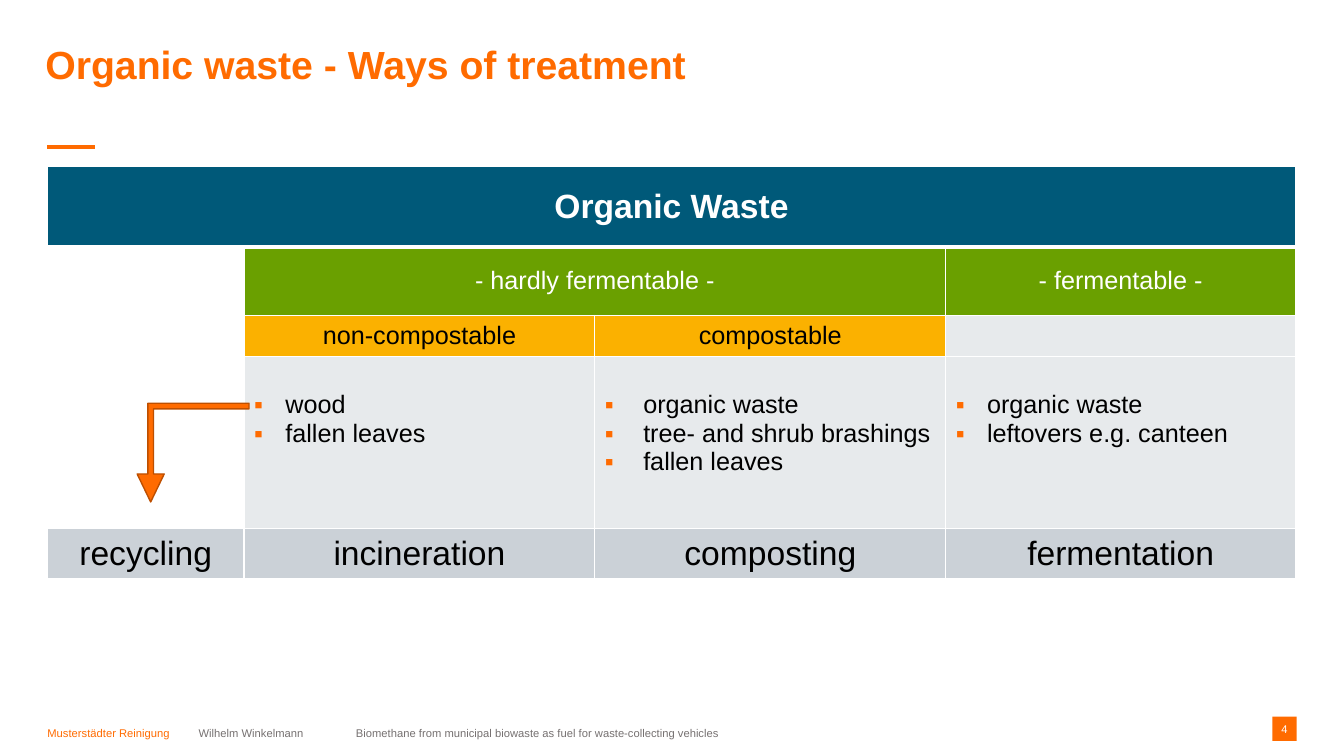
from pptx import Presentation
from pptx import util as u
from pptx.dml.color import RGBColor
from pptx.enum import shapes, text
from pptx.oxml import parse_xml
from pptx.oxml.ns import nsdecls

PX = 9144  # 100 px to the inch
ORANGE, WHITE, BLACK, GREY = "FF6B00", "FFFFFF", "000000", "767171"
BLUE, GREEN, YELLOW, PALE, SILVER = "005979", "6AA000", "FBB100", "E7EAEC", "CBD1D7"
rgb = RGBColor.from_string
CENTER, MIDDLE = text.PP_ALIGN.CENTER, text.MSO_ANCHOR.MIDDLE


def box(*lengths):
    return [n * PX for n in lengths]


def write(p, words, size, color, bold=False, align=text.PP_ALIGN.LEFT):
    p.alignment = align
    r = p.add_run()
    r.text = words
    r.font.name, r.font.size, r.font.bold = "Arial", u.Pt(size), bold
    r.font.color.rgb = rgb(color)


prs = Presentation()
prs.slide_width, prs.slide_height = box(1333, 750)
s = prs.slides.add_slide(prs.slide_layouts[5])

# Title
title = s.shapes.title
title.left, title.top, title.width, title.height = box(45, 45, 1241, 87)
tf = title.text_frame
tf.margin_left = tf.margin_top = tf.margin_right = tf.margin_bottom = 0
tf.vertical_anchor, tf.auto_size = text.MSO_ANCHOR.TOP, text.MSO_AUTO_SIZE.NONE
tf.paragraphs[0].line_spacing = 0.9
write(tf.paragraphs[0], "Organic waste - Ways of treatment", 28, ORANGE, True)

# Accent line under the title
accent = s.shapes.add_connector(shapes.MSO_CONNECTOR.STRAIGHT, *box(47, 146, 94, 146))
accent.line.color.rgb, accent.line.width = rgb(ORANGE), u.Pt(2.5)
accent._element.spPr.append(parse_xml(f"<a:effectLst {nsdecls('a')}/>"))

# Footer
for left, width, words, color in [
    (47, 130, "Musterstädter Reinigung", ORANGE),
    (197, 1024, "Wilhelm Winkelmann\tBiomethane from municipal biowaste"
                " as fuel for waste-collecting vehicles", GREY),
]:
    tf = s.shapes.add_textbox(*box(left, 703, width, 31)).text_frame
    tf.word_wrap, tf.vertical_anchor = True, text.MSO_ANCHOR.BOTTOM
    tf.margin_left = tf.margin_top = tf.margin_right = tf.margin_bottom = 0
    p = tf.paragraphs[0]
    write(p, words, 8, color)
    p._p.get_or_add_pPr().append(parse_xml(
        f'<a:tabLst {nsdecls("a")}><a:tab pos="{156 * PX}" algn="l"/></a:tabLst>'))

# Page number
badge = s.shapes.add_shape(shapes.MSO_SHAPE.RECTANGLE, *box(1262, 711, 24, 24))
badge.shadow.inherit = False
badge.fill.solid()
badge.fill.fore_color.rgb = rgb(ORANGE)
badge.line.fill.background()
tf = badge.text_frame
tf.margin_left = tf.margin_top = tf.margin_right = tf.margin_bottom = 0
tf.vertical_anchor = MIDDLE
write(tf.paragraphs[0], "4", 8, WHITE, align=CENTER)

# Table grid with white borders
cols = [195, 348, 348, 347]
rows = [80, 68, 41, 41, 41, 88, 46]
table = s.shapes.add_table(len(rows), len(cols), *box(47, 165, sum(cols), sum(rows))).table
table.first_row = table.horz_banding = False
for col, width in zip(table.columns, cols):
    col.width = width * PX
for row, height in zip(table.rows, rows):
    row.height = height * PX
for i in range(len(rows)):
    for j in range(len(cols)):
        cell = table.cell(i, j)
        for side in "LRTB":
            thick = (i, side) in [(0, "B"), (1, "T")]
            cell._tc.get_or_add_tcPr().append(parse_xml(
                f'<a:ln{side} {nsdecls("a")} w="{u.Pt(3 if thick else 1)}"><a:solidFill>'
                f'<a:srgbClr val="{WHITE}"/></a:solidFill></a:ln{side}>'))
        cell.fill.background()

# Merged cells
for top, left, bottom, right in [(0, 0, 0, 3), (1, 1, 1, 2)] + [(3, j, 5, j) for j in (1, 2, 3)]:
    table.cell(top, left).merge(table.cell(bottom, right))

# Headings and treatments: row, first column, words, fill, size, colour
headings = [
    (0, 0, ["Organic Waste"], BLUE, 24, WHITE),
    (1, 1, ["- hardly fermentable -", "", "- fermentable -"], GREEN, 18, WHITE),
    (2, 1, ["non-compostable", "compostable"], YELLOW, 18, BLACK),
    (6, 0, ["recycling", "incineration", "composting", "fermentation"], SILVER, 24, BLACK),
]
for i, first, labels, fill, size, color in headings:
    for j, label in enumerate(labels, first):
        cell = table.cell(i, j)
        cell.fill.solid()
        cell.fill.fore_color.rgb = rgb(fill)
        cell.vertical_anchor = MIDDLE
        if label:
            write(cell.text_frame.paragraphs[0], label, size, color, i == 0, CENTER)

# Bulleted kinds of waste: column, indent, items
kinds = [
    (1, 31, ["wood", "fallen leaves"]),
    (2, 38, ["organic waste", "tree- and shrub brashings", "fallen leaves"]),
    (3, 31, ["organic waste", "leftovers e.g. canteen"]),
]
for j, indent, items in kinds:
    cell = table.cell(3, j)
    cell.margin_top = 34 * PX
    for k, item in enumerate(items):
        p = cell.text_frame.paragraphs[0] if k == 0 else cell.text_frame.add_paragraph()
        write(p, item, 18, BLACK)
        pPr = p._p.get_or_add_pPr()
        pPr.set("marL", str(indent * PX))
        pPr.set("indent", str(-indent * PX))
        pPr.append(parse_xml(f'<a:buClr {nsdecls("a")}><a:srgbClr val="{ORANGE}"/></a:buClr>'))
        pPr.append(parse_xml(f'<a:buFont {nsdecls("a")} typeface="Arial"/>'))
        pPr.append(parse_xml(f'<a:buChar {nsdecls("a")} char="▪"/>'))
for i, j in [(2, 3), (3, 1), (3, 2), (3, 3)]:
    table.cell(i, j).fill.solid()
    table.cell(i, j).fill.fore_color.rgb = rgb(PALE)

# Arrow from wood to recycling
arrow = s.shapes.add_shape(shapes.MSO_SHAPE.BENT_UP_ARROW, *box(136, 400, 111, 98))
arrow.shadow.inherit = False
arrow.rotation = 180
for k, value in enumerate([0.057, 0.137, 0.284]):
    arrow.adjustments[k] = value
arrow.fill.solid()
arrow.fill.fore_color.rgb = rgb(ORANGE)
arrow.line.color.rgb, arrow.line.width = rgb("BD4F00"), u.Pt(1)

prs.save("out.pptx")
